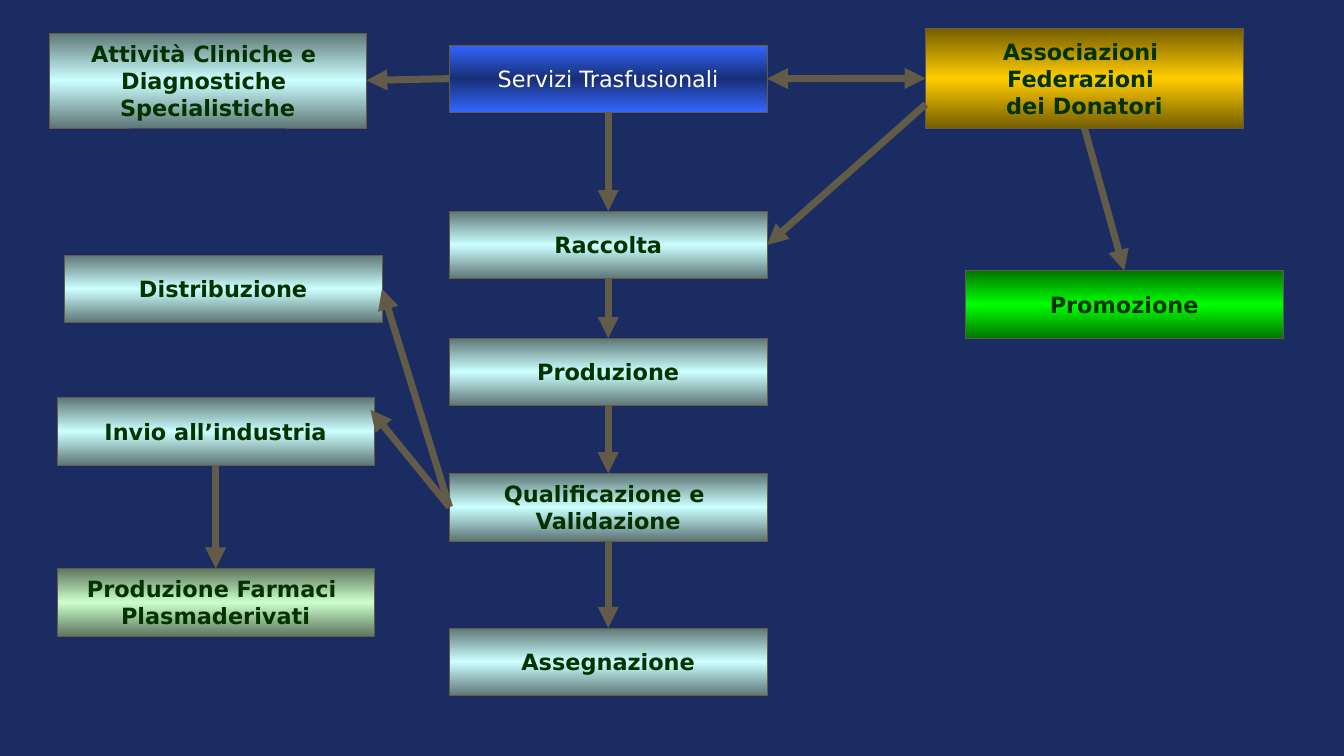
from copy import deepcopy
from dataclasses import dataclass
from typing import NamedTuple

from lxml import etree
from pptx import Presentation
from pptx.dml.color import RGBColor
from pptx.enum.shapes import MSO_CONNECTOR, MSO_SHAPE
from pptx.enum.text import MSO_ANCHOR, PP_ALIGN
from pptx.oxml.ns import qn
from pptx.util import Pt

PX = 9144  # 100 px to the inch
RECT = MSO_SHAPE.RECTANGLE
STRAIGHT = MSO_CONNECTOR.STRAIGHT
MIDDLE = MSO_ANCHOR.MIDDLE
CENTER = PP_ALIGN.CENTER
TOP, LEFT, BOTTOM, RIGHT = range(4)


@dataclass(frozen=True)
class Theme:
    back: str = "1A2C62"
    line: str = "625B48"
    dark: str = "003300"
    white: str = "FFFFFF"
    font: str = "DejaVu Sans"
    size: int = 32
    thin: float = 0.75
    thick: int = 10
    # Each gradient runs from edge to centre and back
    blue: tuple = ("3366FF", "182F76")
    gold: tuple = ("765E00", "FFCC00")
    green: tuple = ("007600", "00FF00")
    aqua: tuple = ("5E7676", "CCFFFF")
    mint: tuple = ("5E765E", "CCFFCC")


THEME = Theme()


class Box(NamedTuple):
    name: str
    x: int
    y: int
    lines: tuple
    grad: tuple = THEME.aqua
    h: int = 134
    w: int = 630


class End(NamedTuple):
    """A side of a named box, or a free point when the name is empty."""
    name: str = ""
    side: int = 0
    x: int = 0
    y: int = 0


class Arrow(NamedTuple):
    start: End
    stop: End
    both: bool = False


MID = 892
BOXES = [
    Box("services", MID, 89, ("Servizi Trasfusionali",), THEME.blue),
    Box("donors", 1837, 57,
        ("Associazioni ", "Federazioni ", "dei Donatori"), THEME.gold, 197),
    Box("promo", 1916, 537, ("Promozione",), THEME.green),
    Box("collect", MID, 419, ("Raccolta",)),
    Box("produce", MID, 671, ("Produzione",)),
    Box("qualify", MID, 939, ("Qualificazione e ", "Validazione")),
    Box("assign", MID, 1246, ("Assegnazione",)),
    Box("share", 128, 506, ("Distribuzione",)),
    Box("send", 113, 789, ("Invio all’industria",)),
    Box("drugs", 113, 1128,
        ("Produzione Farmaci ", "Plasmaderivati"), THEME.mint),
    Box("clinic", 97, 65,
        ("Attività Cliniche e ", "Diagnostiche ", "Specialistiche"), h=189),
]

DOWN = [("services", "collect"), ("collect", "produce"),
        ("produce", "qualify"), ("qualify", "assign"),
        ("send", "drugs"), ("donors", "promo")]
ARROWS = [Arrow(End(a, BOTTOM), End(b, TOP)) for a, b in DOWN] + [
    Arrow(End("qualify", LEFT), End("share", RIGHT)),
    Arrow(End("qualify", LEFT), End(x=735, y=813)),
    Arrow(End(x=1837, y=207), End("collect", RIGHT)),
    Arrow(End("services", RIGHT), End("donors", LEFT), both=True),
    Arrow(End("services", LEFT), End("clinic", RIGHT)),
]


def rgb(code: str) -> RGBColor:
    return RGBColor.from_string(code)


def write(frame, lines: tuple, *, color: str, bold: bool) -> None:
    frame.word_wrap = False
    frame.vertical_anchor = MIDDLE
    for i, line in enumerate(lines):
        para = frame.add_paragraph() if i else frame.paragraphs[0]
        para.alignment = CENTER
        run = para.add_run()
        run.text = line
        font = run.font
        font.name, font.size, font.bold = THEME.font, Pt(THEME.size), bold
        font.color.rgb = rgb(color)


def shade(shape, grad: tuple) -> None:
    """Fill with a vertical gradient of edge, centre, edge."""
    edge, core = grad
    fill = shape.fill
    fill.gradient()
    fill.gradient_angle = 270
    stops = shape._element.spPr.find(".//" + qn("a:gsLst"))
    stops.append(deepcopy(stops[-1]))
    for stop, place, code in zip(fill.gradient_stops, (0, 0.5, 1),
                                 (edge, core, edge)):
        stop.position = place
        stop.color.rgb = rgb(code)


def draw_box(slide, box: Box):
    shape = slide.shapes.add_shape(
        RECT, *(v * PX for v in (box.x, box.y, box.w, box.h)))
    shape.shadow.inherit = False
    shade(shape, box.grad)
    shape.line.color.rgb = rgb(THEME.line)
    shape.line.width = Pt(THEME.thin)
    lead = box.grad == THEME.blue
    write(shape.text_frame, box.lines,
          color=THEME.white if lead else THEME.dark, bold=not lead)
    return shape


def draw_arrow(slide, arrow: Arrow, shapes: dict) -> None:
    start, stop = arrow.start, arrow.stop
    link = slide.shapes.add_connector(
        STRAIGHT, *(v * PX for v in (start.x, start.y, stop.x, stop.y)))
    if start.name:
        link.begin_connect(shapes[start.name], start.side)
    if stop.name:
        link.end_connect(shapes[stop.name], stop.side)
    link.line.color.rgb = rgb(THEME.line)
    link.line.width = Pt(THEME.thick)
    ends = ("headEnd", "tailEnd") if arrow.both else ("tailEnd",)
    for end in ends:
        etree.SubElement(link.line._get_or_add_ln(), qn("a:" + end),
                         type="triangle")
    etree.SubElement(link._element.spPr, qn("a:effectLst"))


def main() -> None:
    deck = Presentation()
    deck.slide_width, deck.slide_height = 2667 * PX, 1500 * PX
    slide = deck.slides.add_slide(deck.slide_layouts[6])
    back = slide.background.fill
    back.solid()
    back.fore_color.rgb = rgb(THEME.back)
    shapes = {box.name: draw_box(slide, box) for box in BOXES}
    for arrow in ARROWS:
        draw_arrow(slide, arrow, shapes)
    deck.save("out.pptx")


if __name__ == "__main__":
    main()
